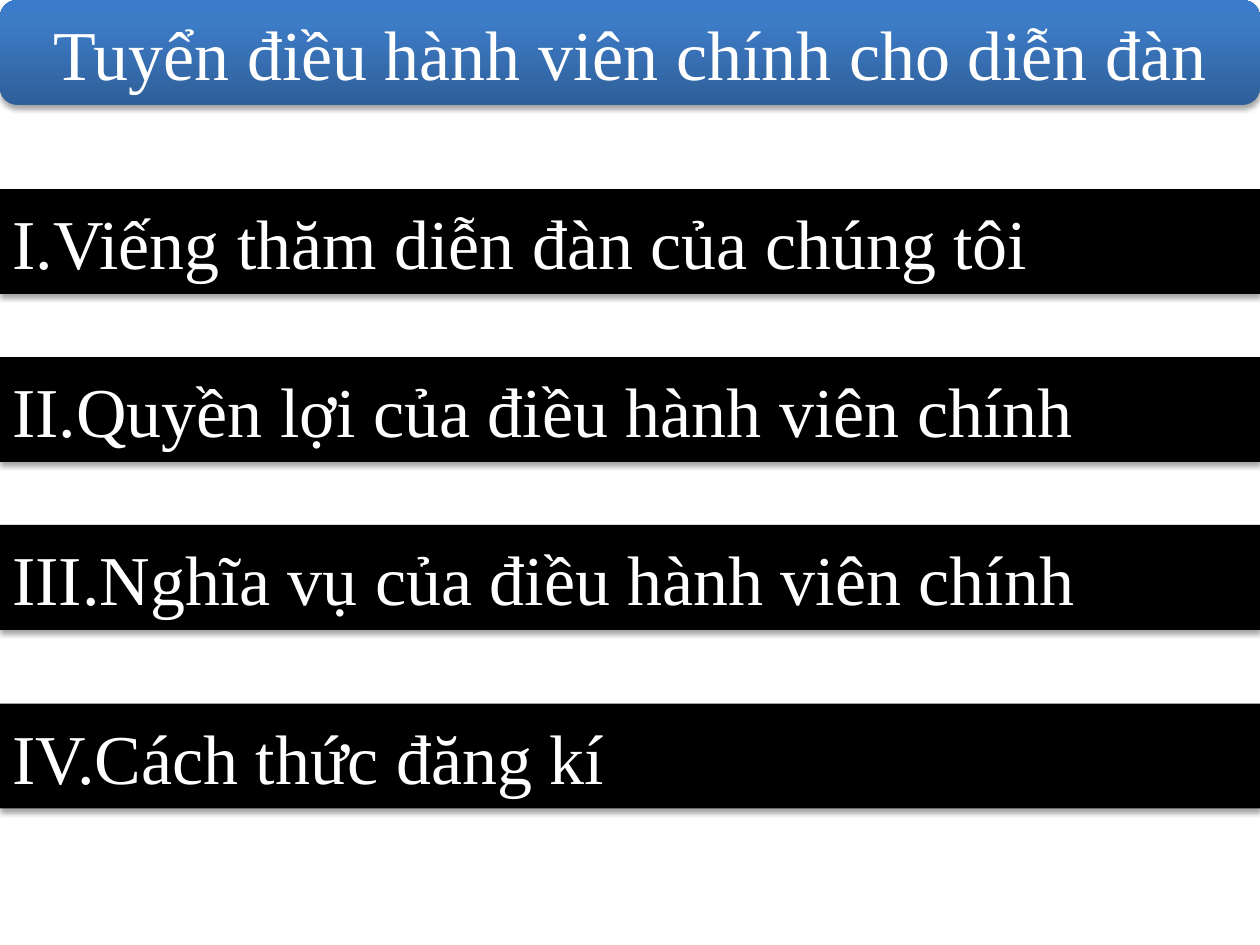
from copy import deepcopy
from dataclasses import dataclass

from lxml.etree import SubElement
from pptx import Presentation
from pptx.dml.color import RGBColor
from pptx.enum.shapes import MSO_SHAPE
from pptx.enum.text import MSO_ANCHOR, PP_ALIGN
from pptx.oxml.ns import qn
from pptx.shapes.autoshape import Shape
from pptx.slide import Slide
from pptx.util import Pt

HUES = {
    "text": "FFFFFF",
    "bar": "000000",
    "shade": "000000",
    "low": "2F5F99",
    "mid": "3D7CC7",
    "high": "3A7CCB",
}
WIDTH = 720
HEIGHT = 60


@dataclass
class Bar:
    top: float
    text: str
    form: MSO_SHAPE = MSO_SHAPE.RECTANGLE
    align: PP_ALIGN = PP_ALIGN.JUSTIFY


TITLE = Bar(
    0,
    "Tuyển điều hành viên chính cho diễn đàn",
    MSO_SHAPE.ROUNDED_RECTANGLE,
    PP_ALIGN.CENTER,
)
ITEMS = [
    Bar(108, "I.Viếng thăm diễn đàn của chúng tôi"),
    Bar(204, "II.Quyền lợi của điều hành viên chính"),
    Bar(300, "III.Nghĩa vụ của điều hành viên chính"),
    Bar(402, "IV.Cách thức đăng kí"),
]


def hue(name: str) -> RGBColor:
    return RGBColor.from_string(HUES[name])


def add_shade(shape: Shape) -> None:
    shape.shadow.inherit = False
    effects = shape._element.spPr.find(qn("a:effectLst"))
    outer = SubElement(
        effects,
        qn("a:outerShdw"),
        blurRad=str(Pt(3.15)),
        dist=str(Pt(1.8)),
        dir="5400000",
        rotWithShape="0",
    )
    color = SubElement(outer, qn("a:srgbClr"), val=HUES["shade"])
    SubElement(color, qn("a:alpha"), val="35000")


def add_blend(shape: Shape) -> None:
    fill = shape.fill
    fill.gradient()
    fill.gradient_angle = 90
    first = shape._element.spPr.find(".//" + qn("a:gs"))
    first.addnext(deepcopy(first))
    marks = [(0, "low"), (0.8, "mid"), (1, "high")]
    for stop, (place, name) in zip(fill.gradient_stops, marks):
        stop.position = place
        stop.color.rgb = hue(name)


def add_bar(slide: Slide, bar: Bar) -> Shape:
    shape = slide.shapes.add_shape(
        bar.form, Pt(0), Pt(bar.top), Pt(WIDTH), Pt(HEIGHT)
    )
    shape.fill.solid()
    shape.fill.fore_color.rgb = hue("bar")
    shape.line.fill.background()
    add_shade(shape)
    frame = shape.text_frame
    frame.text = bar.text
    frame.word_wrap = True
    frame.vertical_anchor = MSO_ANCHOR.MIDDLE
    line = frame.paragraphs[0]
    line.alignment = bar.align
    font = line.runs[0].font
    font.name = "Times New Roman"
    font.size = Pt(40)
    font.color.rgb = hue("text")
    return shape


def main() -> None:
    deck = Presentation()
    deck.slide_width = Pt(WIDTH)
    deck.slide_height = Pt(540)
    slide = deck.slides.add_slide(deck.slide_layouts[6])
    add_blend(add_bar(slide, TITLE))
    for item in ITEMS:
        add_bar(slide, item)
    deck.save("out.pptx")


if __name__ == "__main__":
    main()
